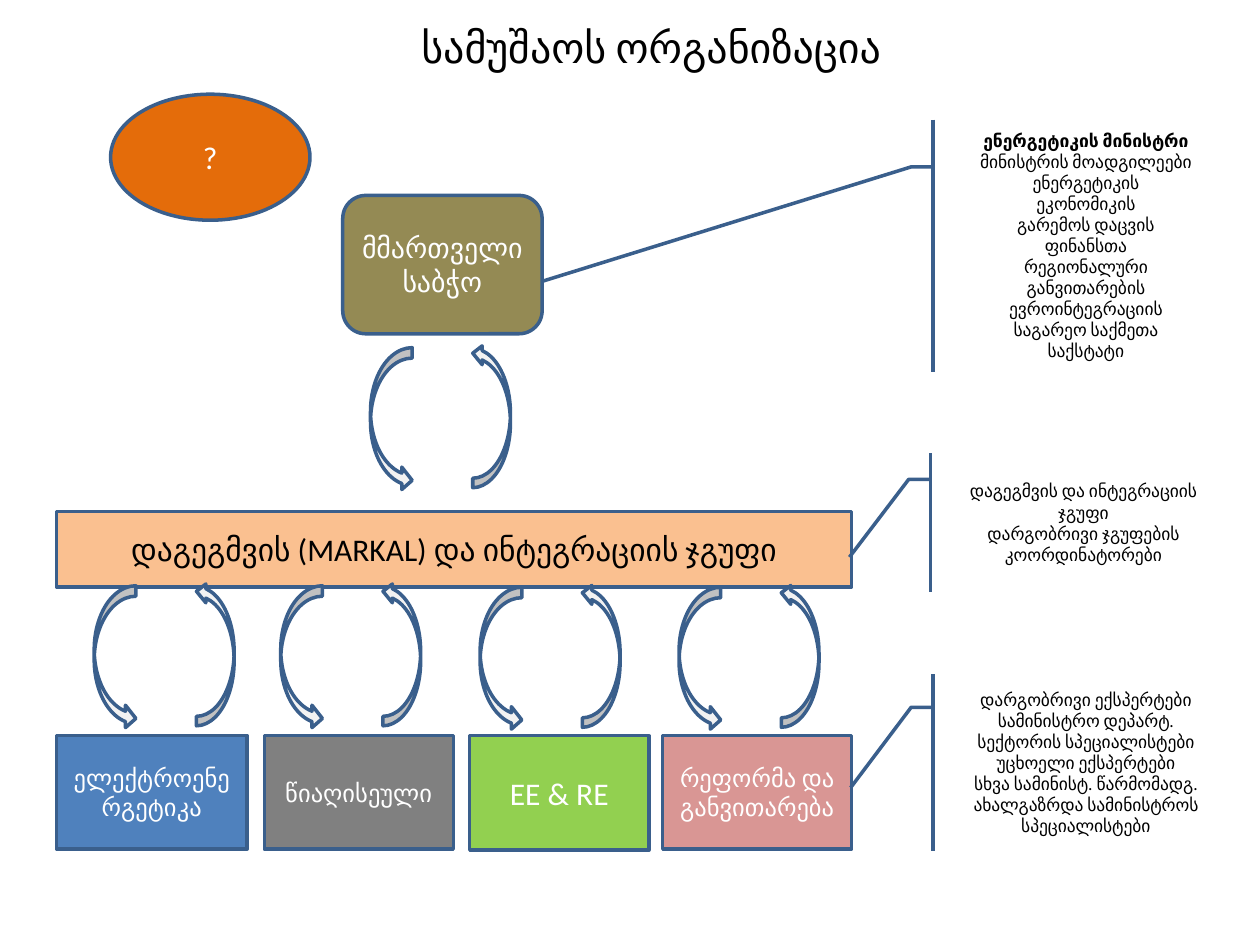
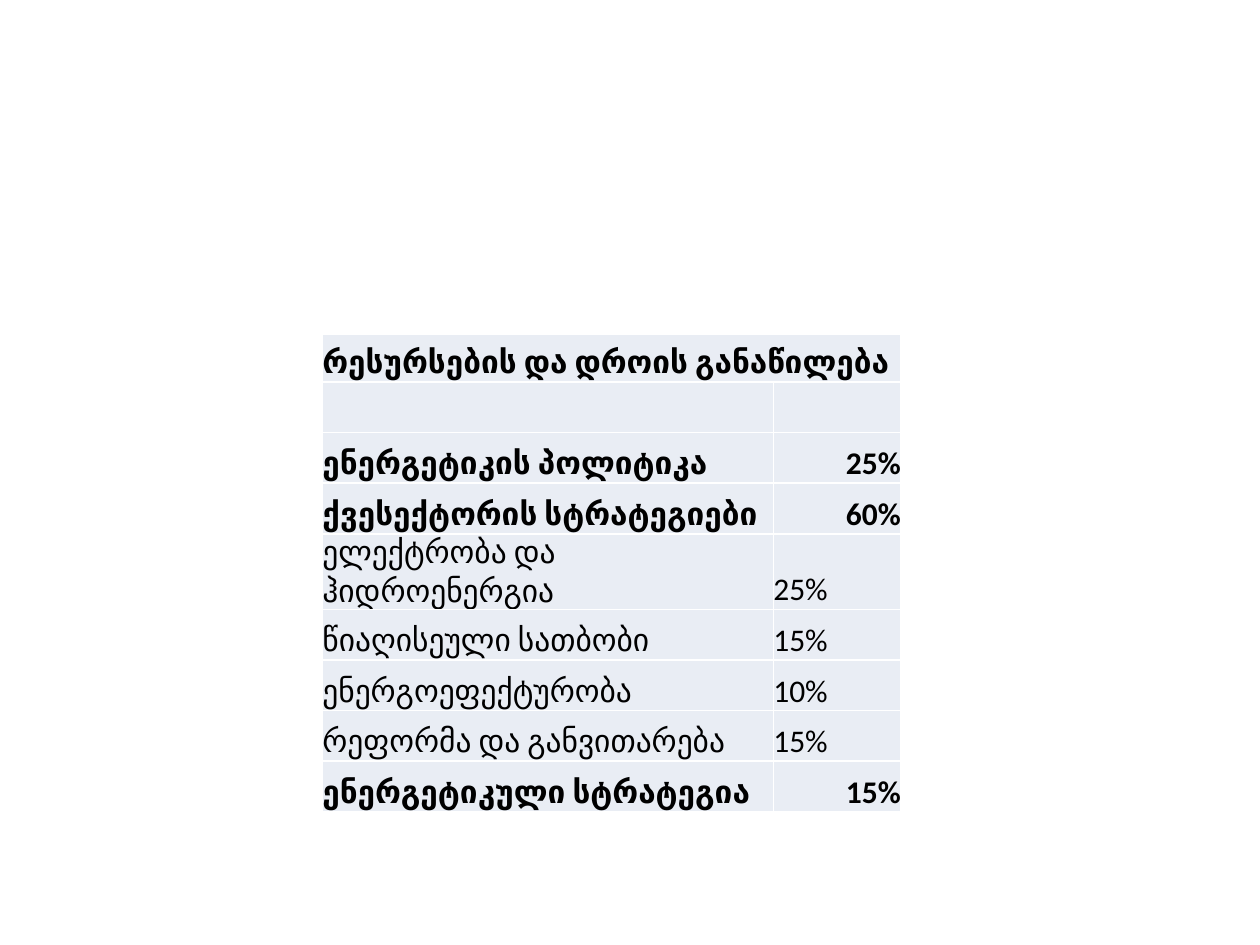
"""Build two slides: the work organisation chart and the resource allocation table."""
from lxml.etree import SubElement
from pptx import Presentation
from pptx.dml.color import RGBColor
from pptx.enum.shapes import MSO_SHAPE
from pptx.enum.text import MSO_ANCHOR, PP_ALIGN
from pptx.oxml.ns import qn
from pptx.util import Cm, Pt

COLORS = {
    "black": "000000", "white": "FFFFFF", "outline": "3A5F8C", "orange": "E46C0A",
    "olive": "948A54", "green": "92D050", "gray": "808080", "blue": "4F81BD",
    "rose": "D99694", "peach": "FAC090", "arrow": "F2F2F2", "cell": "E9EDF4",
}
TITLE = "სამუშაოს ორგანიზაცია"
TITLE_PLACE = (1.7, 0, 22.86, 1.9)

UNITS = [
    ("?", MSO_SHAPE.OVAL, (2.23, 1.9, 4.02, 2.54), "orange", "white", 18),
    ("მმართველი საბჭო", MSO_SHAPE.ROUNDED_RECTANGLE, (6.91, 3.94, 4.02, 2.79), "olive", "white", 16),
    ("დაგეგმვის (MARKAL) და ინტეგრაციის ჯგუფი", MSO_SHAPE.RECTANGLE,
     (1.14, 10.31, 16.03, 1.52), "peach", "black", 18),
]
SECTOR_TOP = 14.83
SECTORS = [
    ("ელექტროენერგეტიკა", 1.14, 3.84, 2.29, "blue", 14),
    ("წიაღისეული", 5.33, 3.81, 2.29, "gray", 14),
    ("EE & RE", 9.47, 3.61, 2.31, "green", 18),
    ("რეფორმა და განვითარება", 13.36, 3.81, 2.29, "rose", 14),
]
CALLOUT_WIDTH = 5.28
CALLOUT_BEND = (0.188, -0.083, 0.188, -0.167)
CALLOUTS = [
    (19.25, 2.41, 5.08, (0.642, -1.575), True, [
        "ენერგეტიკის მინისტრი", "მინისტრის მოადგილეები", "ენერგეტიკის", "ეკონომიკის",
        "გარემოს დაცვის", "ფინანსთა", "რეგიონალური განვითარების", "ევროინტეგრაციის",
        "საგარეო საქმეთა", "საქსტატი"]),
    (19.25, 13.59, 3.56, (0.643, -0.398), False, [
        "დარგობრივი ექსპერტები", "სამინისტრო დეპარტ.", "სექტორის სპეციალისტები",
        "უცხოელი ექსპერტები", "სხვა სამინისტ. წარმომადგ.",
        "ახალგაზრდა სამინისტროს სპეციალისტები"]),
    (19.2, 9.14, 2.79, (0.75, -0.393), False, [
        "დაგეგმვის და ინტეგრაციის ჯგუფი", "დარგობრივი ჯგუფების კოორდინატორები"]),
]
CYCLES = [(1.9, 11.81), (5.66, 11.81), (9.68, 11.84), (13.69, 11.84), (7.47, 7.01)]
CYCLE_HEIGHT = 2.9

TABLE_PLACE = (6.5, 6.73, 11.66, 9.1)
COLUMN_WIDTHS = (9.09, 2.57)
ROW_HEIGHTS = [0.97] + [1.02] * 8
ROWS = [
    ("რესურსების და დროის განაწილება", "", True),
    ("", "", False),
    ("ენერგეტიკის პოლიტიკა", "25%", True),
    ("ქვესექტორის სტრატეგიები", "60%", True),
    ("ელექტრობა და ჰიდროენერგია", "25%", False),
    ("წიაღისეული სათბობი", "15%", False),
    ("ენერგოეფექტურობა", "10%", False),
    ("რეფორმა და განვითარება", "15%", False),
    ("ენერგეტიკული სტრატეგია", "15%", True),
]
CELL_FORMAT = {"margin_left": 0, "margin_right": 0, "margin_top": 0, "margin_bottom": 0,
               "vertical_anchor": MSO_ANCHOR.BOTTOM}
FRAME_FORMAT = {"word_wrap": True, "vertical_anchor": MSO_ANCHOR.MIDDLE}


def apply(target, values):
    for name, value in values.items():
        setattr(target, name, value)


def rgb(color):
    return RGBColor.from_string(COLORS[color])


def lengths(values):
    return [Cm(value) for value in values]


def write(para, text, size, color="black", bold=False, align=PP_ALIGN.CENTER):
    para.alignment = align
    span = para.add_run()
    span.text = text
    apply(span.font, {"name": "Calibri", "size": Pt(size), "bold": bold})
    span.font.color.rgb = rgb(color)


def write_lines(box, lines, size, color="black", bold_first=False):
    frame = box.text_frame
    apply(frame, FRAME_FORMAT)
    for index, line in enumerate(lines):
        para = frame.add_paragraph() if index else frame.paragraphs[0]
        write(para, line, size, color, bold_first and index == 0)


def add_box(page, kind, place, fill, adjustments=()):
    box = page.shapes.add_shape(kind, *lengths(place))
    box.shadow.inherit = False
    box.fill.solid()
    box.fill.fore_color.rgb = rgb(fill)
    box.line.color.rgb = rgb("outline")
    box.line.width = Pt(2)
    for index, value in enumerate(adjustments):
        box.adjustments[index] = value
    return box


def add_cycle(page, left, top):
    add_box(page, MSO_SHAPE.CURVED_RIGHT_ARROW, (left, top, 0.84, CYCLE_HEIGHT),
            "arrow", (0.25, 0.538, 0.25))
    back = add_box(page, MSO_SHAPE.CURVED_RIGHT_ARROW,
                   (left + 2.06, top - 0.08, 0.76, CYCLE_HEIGHT), "arrow")
    back.rotation = 180


def build_organisation(page):
    title = page.shapes.add_textbox(*lengths(TITLE_PLACE))
    write_lines(title, [TITLE], 24)
    sectors = [(text, MSO_SHAPE.RECTANGLE, (left, SECTOR_TOP, width, height), fill, "white", size)
               for text, left, width, height, fill, size in SECTORS]
    for text, kind, place, fill, color, size in UNITS + sectors:
        write_lines(add_box(page, kind, place, fill), [text], size, color)
    for left, top, height, tip, bold_first, lines in CALLOUTS:
        box = add_box(page, MSO_SHAPE.LINE_CALLOUT_2_ACCENT_BAR,
                      (left, top, CALLOUT_WIDTH, height), "white", CALLOUT_BEND + tip)
        write_lines(box, lines, 10, bold_first=bold_first)
    for left, top in CYCLES:
        add_cycle(page, left, top)


def style_cell(cell):
    apply(cell, CELL_FORMAT)
    properties = cell._tc.get_or_add_tcPr()
    for side in ("a:lnL", "a:lnR", "a:lnT", "a:lnB"):
        border = SubElement(properties, qn(side), w=str(Pt(1)))
        SubElement(SubElement(border, qn("a:solidFill")), qn("a:srgbClr"), val=COLORS["white"])
    cell.fill.solid()
    cell.fill.fore_color.rgb = rgb("cell")


def build_allocation(page):
    table = page.shapes.add_table(len(ROWS), 2, *lengths(TABLE_PLACE)).table
    apply(table, {"first_row": False, "horz_banding": False})
    for column, width in zip(table.columns, COLUMN_WIDTHS):
        column.width = Cm(width)
    for row, height, (label, share, bold) in zip(table.rows, ROW_HEIGHTS, ROWS):
        row.height = Cm(height)
        share_align = PP_ALIGN.RIGHT if bold else PP_ALIGN.LEFT
        for cell, text, align in zip(row.cells, (label, share), (PP_ALIGN.LEFT, share_align)):
            style_cell(cell)
            if text:
                write(cell.text_frame.paragraphs[0], text, 18, bold=bold, align=align)
    table.cell(0, 0).merge(table.cell(0, 1))


def main():
    deck = Presentation()
    apply(deck, {"slide_width": Cm(25.4), "slide_height": Cm(19.05)})
    for build in (build_organisation, build_allocation):
        build(deck.slides.add_slide(deck.slide_layouts[6]))
    deck.save("out.pptx")


if __name__ == "__main__":
    main()
